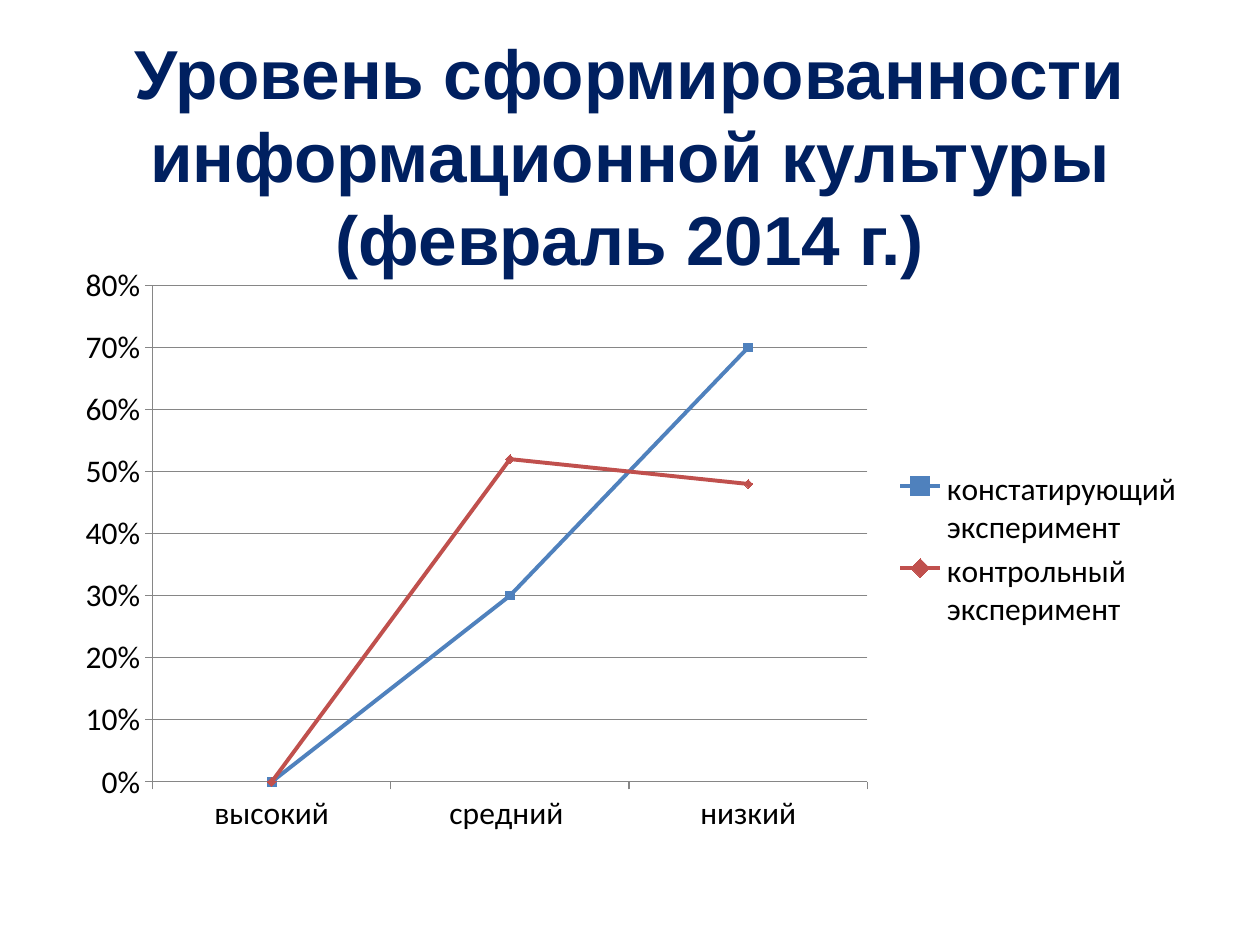
from dataclasses import dataclass

import pptx
import pptx.chart.data
import pptx.dml.color
import pptx.enum.chart
import pptx.enum.text
import pptx.util
from pptx.util import Inches


@dataclass(frozen=True)
class Theme:
    title_font: str = "Arial"
    chart_font: str = "Calibri"
    title_size: float = 39.6
    chart_size: float = 18
    title_color: str = "002060"
    text_color: str = "000000"
    axis_color: str = "868686"


@dataclass(frozen=True)
class Experiment:
    name: str
    shares: tuple[float, ...]
    color: str
    marker: pptx.enum.chart.XL_MARKER_STYLE


THEME = Theme()
TITLE = "Уровень сформированности информационной культуры (февраль 2014 г.)"
LEVELS = ("высокий", "средний ", "низкий")
MARKERS = pptx.enum.chart.XL_MARKER_STYLE
EXPERIMENTS = (
    Experiment("констатирующий эксперимент", (0, 0.3, 0.7), "4F81BD", MARKERS.SQUARE),
    Experiment("контрольный эксперимент", (0, 0.52, 0.48), "C0504D", MARKERS.DIAMOND),
)


def rgb(color: str) -> pptx.dml.color.RGBColor:
    return pptx.dml.color.RGBColor.from_string(color)


def style_font(font, name: str, size: float, color: str, bold: bool = False) -> None:
    font.name = name
    font.size = pptx.util.Pt(size)
    font.bold = bold
    font.color.rgb = rgb(color)


def style_line(line, color: str, width: float) -> None:
    line.color.rgb = rgb(color)
    line.width = pptx.util.Pt(width)


def add_title(slide, text: str) -> None:
    box = slide.shapes.title
    box.left, box.top, box.width, box.height = map(Inches, (0.5, 0.6, 9, 1.26))
    frame = box.text_frame
    frame.text = text
    frame.word_wrap = True
    frame.auto_size = pptx.enum.text.MSO_AUTO_SIZE.NONE
    frame.vertical_anchor = pptx.enum.text.MSO_ANCHOR.MIDDLE
    para = frame.paragraphs[0]
    para.alignment = pptx.enum.text.PP_ALIGN.CENTER
    style_font(para.font, THEME.title_font, THEME.title_size, THEME.title_color, bold=True)


def style_axes(chart) -> None:
    for axis in (chart.category_axis, chart.value_axis):
        axis.major_tick_mark = pptx.enum.chart.XL_TICK_MARK.OUTSIDE
        axis.minor_tick_mark = pptx.enum.chart.XL_TICK_MARK.NONE
        style_line(axis.format.line, THEME.axis_color, 0.75)
    values = chart.value_axis
    values.minimum_scale, values.maximum_scale, values.major_unit = 0, 0.8, 0.1
    values.has_major_gridlines = True
    style_line(values.major_gridlines.format.line, THEME.axis_color, 0.75)
    values.tick_labels.number_format = "0%"
    values.tick_labels.number_format_is_linked = False


def style_series(series, experiment: Experiment) -> None:
    series.smooth = False
    style_line(series.format.line, experiment.color, 2.25)
    series.marker.style = experiment.marker
    series.marker.size = 5
    series.marker.format.fill.solid()
    series.marker.format.fill.fore_color.rgb = rgb(experiment.color)
    style_line(series.marker.format.line, experiment.color, 0.75)


def add_level_chart(slide) -> None:
    data = pptx.chart.data.CategoryChartData(number_format="0%")
    data.categories = LEVELS
    for experiment in EXPERIMENTS:
        data.add_series(experiment.name, experiment.shares)
    chart = slide.shapes.add_chart(
        pptx.enum.chart.XL_CHART_TYPE.LINE_MARKERS,
        Inches(0.5), Inches(2.02), Inches(9), Inches(4.68), data,
    ).chart
    chart.has_title = False
    style_font(chart.font, THEME.chart_font, THEME.chart_size, THEME.text_color)
    chart.has_legend = True
    chart.legend.position = pptx.enum.chart.XL_LEGEND_POSITION.RIGHT
    chart.legend.include_in_layout = False
    style_axes(chart)
    plot = chart.plots[0]
    plot.vary_by_categories = False
    for series, experiment in zip(plot.series, EXPERIMENTS):
        style_series(series, experiment)


def main() -> None:
    deck = pptx.Presentation()
    deck.slide_width, deck.slide_height = Inches(10), Inches(7.5)
    # Title Only layout
    slide = deck.slides.add_slide(deck.slide_layouts[5])
    add_title(slide, TITLE)
    add_level_chart(slide)
    deck.save("out.pptx")


if __name__ == "__main__":
    main()
